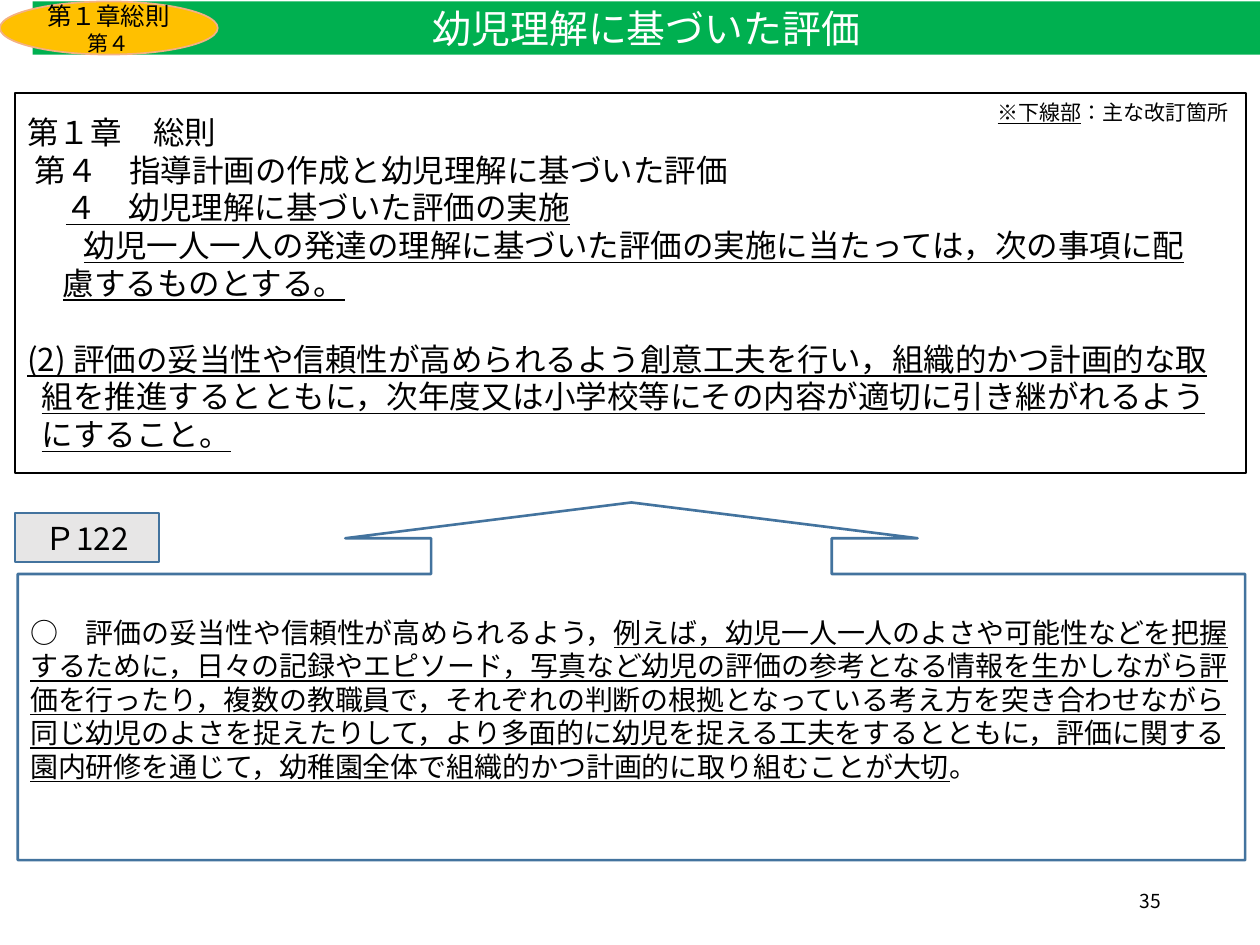
from lxml import etree
from pptx import Presentation
from pptx import util as u
from pptx.dml.color import RGBColor
from pptx.enum import lang, shapes, text
from pptx.oxml.ns import qn

GOTHIC = "Noto Sans CJK JP"
BLACK, WHITE, BLUE = "000000", "FFFFFF", "43739E"
LEFT, CENTER, RIGHT = text.PP_ALIGN.LEFT, text.PP_ALIGN.CENTER, text.PP_ALIGN.RIGHT
TOP, MIDDLE = text.MSO_ANCHOR.TOP, text.MSO_ANCHOR.MIDDLE
BREAK = "\v"


def color(code):
    return RGBColor.from_string(code)


class Page:
    """Style and current slide; all lengths are in centimetres."""

    def __init__(self, deck):
        self.slide = deck.slides.add_slide(deck.slide_layouts[5])

    def style_run(self, run, size, ink=BLACK, face=GOTHIC, underline=False):
        font = run.font
        font.size, font.name, font.underline = u.Pt(size), face, underline
        font.color.rgb = color(ink)
        font.language_id = lang.MSO_LANGUAGE_ID.JAPANESE
        east_asian = etree.Element(qn("a:ea"), typeface=GOTHIC)
        font._element.find(qn("a:latin")).addnext(east_asian)

    def frame(self, box, anchor, margin_top=0.13):
        frame = box.text_frame
        frame.word_wrap = True
        frame.auto_size = text.MSO_AUTO_SIZE.NONE
        frame.vertical_anchor = anchor
        frame.margin_left = frame.margin_right = u.Cm(0.25)
        frame.margin_top, frame.margin_bottom = u.Cm(margin_top), u.Cm(0.13)
        return frame

    def paragraph(self, frame, parts, size, align=LEFT, left=0, first=0, gap=0, face=GOTHIC):
        """Add one paragraph made of (wording, underlined) parts."""
        para = frame.paragraphs[0]
        if para.runs:
            para = frame.add_paragraph()
        para.alignment = align
        para.line_spacing = u.Pt(size * 1.2)
        para.space_before = u.Pt(gap)
        properties = para._p.get_or_add_pPr()
        properties.set("marL", str(u.Cm(left)))
        properties.set("indent", str(u.Cm(first)))
        for wording, underlined in parts:
            if wording == BREAK:
                para.add_line_break()
                continue
            run = para.add_run()
            run.text = wording
            self.style_run(run, size, face=face, underline=underlined)

    def title(self, wording, place, size, fill):
        box = self.slide.shapes.title
        box.left, box.top, box.width, box.height = map(u.Cm, place)
        box.fill.solid()
        box.fill.fore_color.rgb = color(fill)
        frame = self.frame(box, MIDDLE)
        frame.text = wording
        frame.paragraphs[0].alignment = CENTER
        self.style_run(frame.paragraphs[0].runs[0], size, WHITE)

    def shape(self, kind, place, line, width=1, fill=None, anchor=MIDDLE, margin_top=0.13):
        box = self.slide.shapes.add_shape(kind, *map(u.Cm, place))
        box.shadow.inherit = False
        if fill:
            box.fill.solid()
            box.fill.fore_color.rgb = color(fill)
        else:
            box.fill.background()
        box.line.color.rgb = color(line)
        box.line.width = u.Pt(width)
        return box, self.frame(box, anchor, margin_top)

    def text_box(self, place, anchor=TOP):
        box = self.slide.shapes.add_textbox(*map(u.Cm, place))
        return self.frame(box, anchor)


def main():
    deck = Presentation()
    deck.slide_width, deck.slide_height = u.Cm(25.4), u.Cm(19.05)
    page = Page(deck)
    kinds = shapes.MSO_SHAPE

    # Title bar
    page.title("幼児理解に基づいた評価", (0.66, 0.03, 24.74, 1.07), 22.2, "00B050")

    # Guideline text: parts, left indent, first-line indent, gap before
    _, guideline = page.shape(kinds.RECTANGLE, (0.3, 1.88, 24.82, 7.65), BLACK)
    lines = [
        ([("第１章　総則", False)], 0, 0, 0),
        ([("第４　指導計画の作成と幼児理解に基づいた評価", False)], 0.15, 0, 0),
        ([("４　幼児理解に基づいた評価の実施", True)], 0.78, 0, 0),
        ([("幼児一人一人の発達の理解に基づいた評価の実施に当たっては，次の事項に配", True),
          (BREAK, False), ("慮するものとする。", True)], 0.72, 0.42, 0),
        ([("(2) 評価の妥当性や信頼性が高められるよう創意工夫を行い，組織的かつ計画的な取", True)],
         0, 0, 21.6),
        ([("組を推進するとともに，次年度又は小学校等にその内容が適切に引き継がれるよう", True)],
         0.29, 0, 0),
        ([("にすること。", True)], 0.29, 0, 0),
    ]
    for parts, left, first, gap in lines:
        page.paragraph(guideline, parts, 18, left=left, first=first, gap=gap)

    # Legend for the underlining
    legend = page.text_box((19.86, 1.88, 5.33, 0.76))
    page.paragraph(legend, [("※下線部", True), ("：主な改訂箇所", False)], 12)

    # Page number
    number = page.text_box((17.93, 17.65, 5.72, 1.02), MIDDLE)
    page.paragraph(number, [("35", False)], 11, RIGHT)

    # Chapter badge
    _, badge = page.shape(kinds.OVAL, (0, 0.03, 4.39, 1.07), "F4B183", fill="FFC000")
    page.paragraph(badge, [("第１章総則", False)], 14, CENTER)
    page.paragraph(badge, [("第４", False)], 12, CENTER)

    # Explanation pointing up at the guideline
    callout, explanation = page.shape(
        kinds.UP_ARROW_CALLOUT, (0.36, 10.13, 24.74, 7.21), BLUE, 1.5,
        anchor=TOP, margin_top=0.83)
    for index, value in enumerate((1.12, 0.8, 0.1, 0.8)):
        callout.adjustments[index] = value
    page.paragraph(explanation, [
        ("○　評価の妥当性や信頼性が高められるよう，", False),
        ("例えば，幼児一人一人のよさや可能性などを把握するために，日々の記録やエピソード，"
         "写真など幼児の評価の参考となる情報を生かしながら評価を行ったり，複数の教職員で，"
         "それぞれの判断の根拠となっている考え方を突き合わせながら同じ幼児のよさを捉えたりして，"
         "より多面的に幼児を捉える工夫をするとともに，評価に関する園内研修を通じて，"
         "幼稚園全体で組織的かつ計画的に取り組むことが大切", True),
        ("。", False)], 16, face="Arial")

    # Page reference
    _, reference = page.shape(kinds.RECTANGLE, (0.3, 10.34, 2.9, 0.99), BLUE, fill="E7E6E6")
    page.paragraph(reference, [("Ｐ122", False)], 18, CENTER)

    deck.save("out.pptx")


if __name__ == "__main__":
    main()
